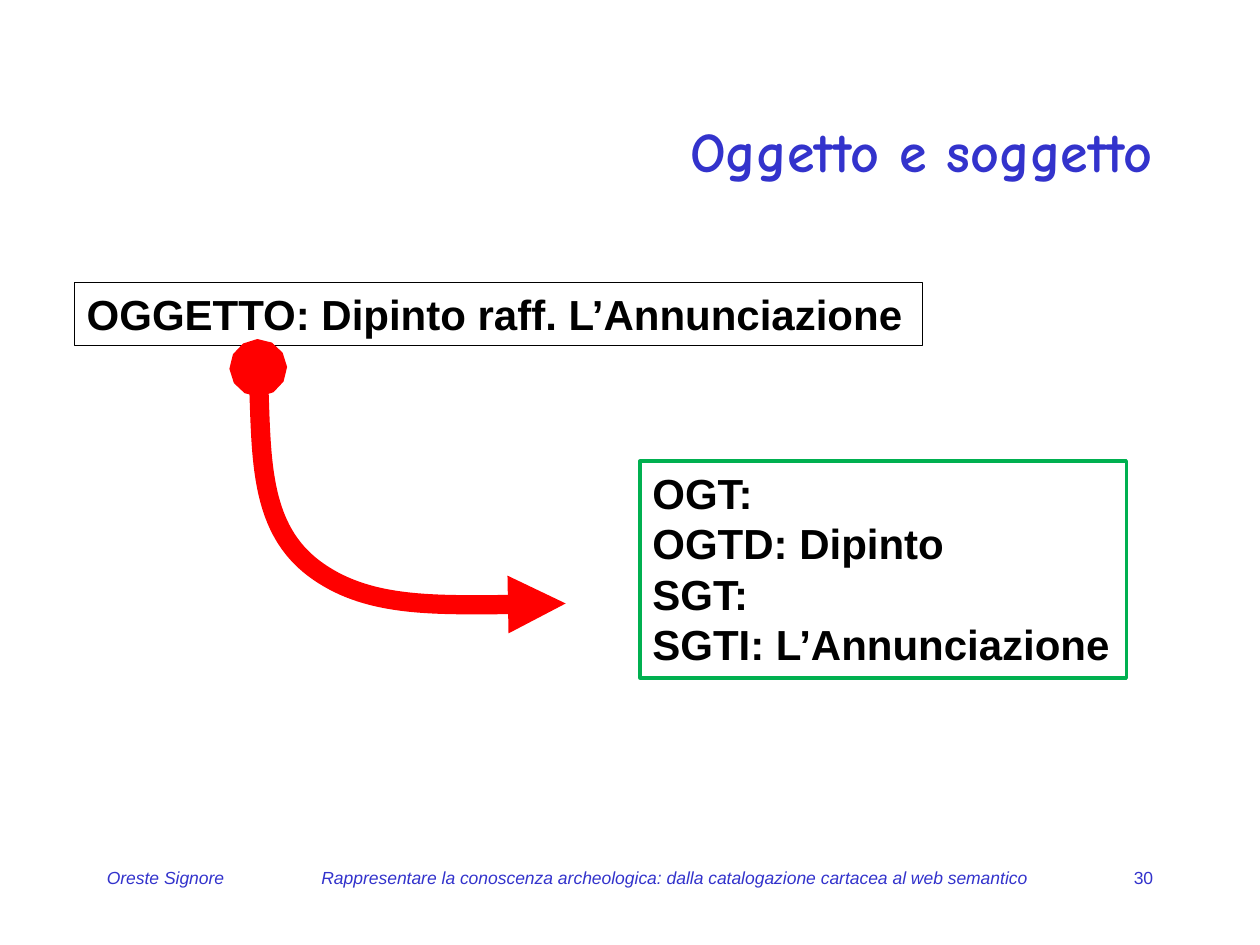
from lxml.etree import SubElement
from pptx import Presentation
from pptx.dml.color import RGBColor
from pptx.enum.shapes import MSO_SHAPE as Shape
from pptx.enum.text import MSO_ANCHOR as Anchor, PP_ALIGN as Align
from pptx.oxml.ns import qn
from pptx.util import Inches, Pt

COLORS = {"blue": "3333CC", "black": "000000", "green": "00B050", "red": "FF0000"}
FOOTERS = [
    (0.75, 1.34, "Oreste Signore", Align.LEFT, True),
    (2.16, 6.38, "Rappresentare la conoscenza archeologica: "
     "dalla catalogazione cartacea al web semantico", Align.CENTER, True),
    (8.7, 0.55, "30", Align.RIGHT, False),
]
CURVE = [(2.05, 2.92), (2.07, 3.56), (2.08, 4.2), (2.49, 4.51),
         (2.9, 4.82), (3.7, 4.81), (4.49, 4.79)]


def color(name):
    return RGBColor.from_string(COLORS[name])


def write(shape, text, size, tint, align=Align.LEFT, anchor=Anchor.TOP,
          font="Arial", bold=False, italic=False, wrap=True):
    frame = shape.text_frame
    frame.text = text
    frame.word_wrap = wrap
    frame.vertical_anchor = anchor
    for para in frame.paragraphs:
        para.alignment = align
        for span in para.runs:
            span.font.name = font
            span.font.size = Pt(size)
            span.font.bold = bold
            span.font.italic = italic
            span.font.color.rgb = color(tint)


def add_text(page, bounds, text, size, tint, **style):
    box = page.shapes.add_textbox(*map(Inches, bounds))
    write(box, text, size, tint, **style)


def add_record(page, bounds, text, outline, width):
    box = page.shapes.add_shape(Shape.RECTANGLE, *map(Inches, bounds))
    box.shadow.inherit = False
    box.fill.background()
    box.line.color.rgb = color(outline)
    box.line.width = Pt(width)
    write(box, text, 24, "black", bold=True, wrap=False)


def add_curved_arrow(page, points, tint, width):
    """Draw a chain of cubic curves: a start point, then three points per curve."""
    start, *rest = [(Inches(x), Inches(y)) for x, y in points]
    builder = page.shapes.build_freeform(*start)
    builder.add_line_segments(rest, close=False)
    arrow = builder.convert_to_shape()
    arrow.shadow.inherit = False
    arrow.fill.background()
    arrow.line.color.rgb = color(tint)
    arrow.line.width = Pt(width)

    segments = arrow.element.xpath(".//a:lnTo")
    for first in range(0, len(segments), 3):
        trio = segments[first:first + 3]
        trio[0].tag = qn("a:cubicBezTo")
        for segment in trio[1:]:
            trio[0].append(segment[0])
            segment.getparent().remove(segment)

    outline = arrow.element.xpath(".//a:ln")[0]
    for end, kind in (("a:headEnd", "oval"), ("a:tailEnd", "triangle")):
        SubElement(outline, qn(end), type=kind)


def main():
    deck = Presentation()
    deck.slide_width, deck.slide_height = Inches(10), Inches(7.5)
    page = deck.slides.add_slide(deck.slide_layouts[6])

    for left, width, text, align, italic in FOOTERS:
        add_text(page, (left, 6.83, width, 0.5), text, 10, "blue",
                 align=align, italic=italic)
    add_text(page, (0.75, 0.67, 8.5, 1.04), "Oggetto e soggetto", 32, "blue",
             align=Align.RIGHT, anchor=Anchor.MIDDLE, font="Comic Neue", bold=True)
    add_record(page, (0.59, 2.24, 6.73, 0.5),
               "OGGETTO: Dipinto raff. L’Annunciazione", "black", 0.75)
    add_record(page, (5.08, 3.66, 3.86, 1.72),
               "OGT:\nOGTD: Dipinto\nSGT:\nSGTI: L’Annunciazione", "green", 2)
    add_curved_arrow(page, CURVE, "red", 11)
    deck.save("out.pptx")


if __name__ == "__main__":
    main()
